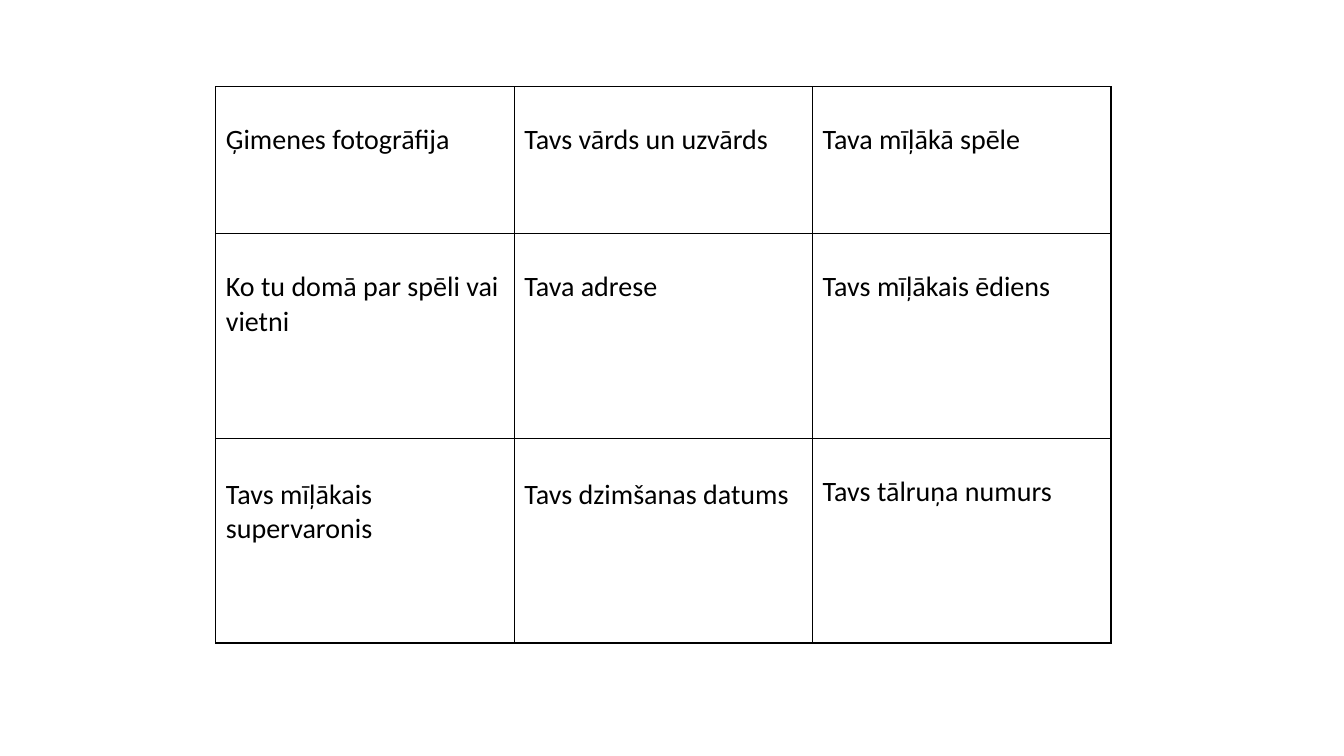
from lxml.etree import SubElement
from pptx import Presentation
from pptx.dml.color import RGBColor
from pptx.oxml.ns import qn
from pptx.util import Inches, Pt

PROMPTS = [
    ["Ģimenes fotogrāfija", "Tavs vārds un uzvārds", "Tava mīļākā spēle"],
    ["Ko tu domā par spēli vai vietni", "Tava adrese", "Tavs mīļākais ēdiens"],
    ["Tavs mīļākais supervaronis", "Tavs dzimšanas datums", "Tavs tālruņa numurs"],
]
COLORS = {"ink": "000000", "paper": "FFFFFF"}
LEFT, TOP = 2.14, 0.86
COLUMN_WIDTH = 2.96
ROW_HEIGHTS = [1.46, 2.03, 2.03]
TEXT_DROP = 0.36
LOWER_DROP = 0.39
LOWER_CELLS = {(2, 0), (2, 1)}


def add_borders(cell):
    """Draw a 1 pt line on all four sides of a cell."""
    properties = cell._tc.get_or_add_tcPr()
    for index, side in enumerate(("lnL", "lnR", "lnT", "lnB")):
        line = properties.makeelement(qn(f"a:{side}"), {"w": str(Pt(1))})
        fill = SubElement(line, qn("a:solidFill"))
        SubElement(fill, qn("a:srgbClr"), val=COLORS["ink"])
        properties.insert(index, line)


def fill_cell(cell, text, drop):
    cell.fill.solid()
    cell.fill.fore_color.rgb = RGBColor.from_string(COLORS["paper"])
    cell.margin_top = Inches(drop)
    span = cell.text_frame.paragraphs[0].add_run()
    span.text = text
    span.font.name = "Calibri"
    span.font.size = Pt(20)
    span.font.bold = False
    span.font.color.rgb = RGBColor.from_string(COLORS["ink"])
    add_borders(cell)


def main():
    deck = Presentation()
    deck.slide_width, deck.slide_height = Inches(13.33), Inches(7.5)
    page = deck.slides.add_slide(deck.slide_layouts[6])
    columns = len(PROMPTS[0])
    table = page.shapes.add_table(
        len(PROMPTS), columns, Inches(LEFT), Inches(TOP),
        Inches(COLUMN_WIDTH * columns), Inches(sum(ROW_HEIGHTS)),
    ).table
    table.first_row = table.horz_banding = False
    for column in table.columns:
        column.width = Inches(COLUMN_WIDTH)
    for r, (height, prompts) in enumerate(zip(ROW_HEIGHTS, PROMPTS)):
        table.rows[r].height = Inches(height)
        for c, prompt in enumerate(prompts):
            drop = LOWER_DROP if (r, c) in LOWER_CELLS else TEXT_DROP
            fill_cell(table.cell(r, c), prompt, drop)
    deck.save("out.pptx")


if __name__ == "__main__":
    main()
